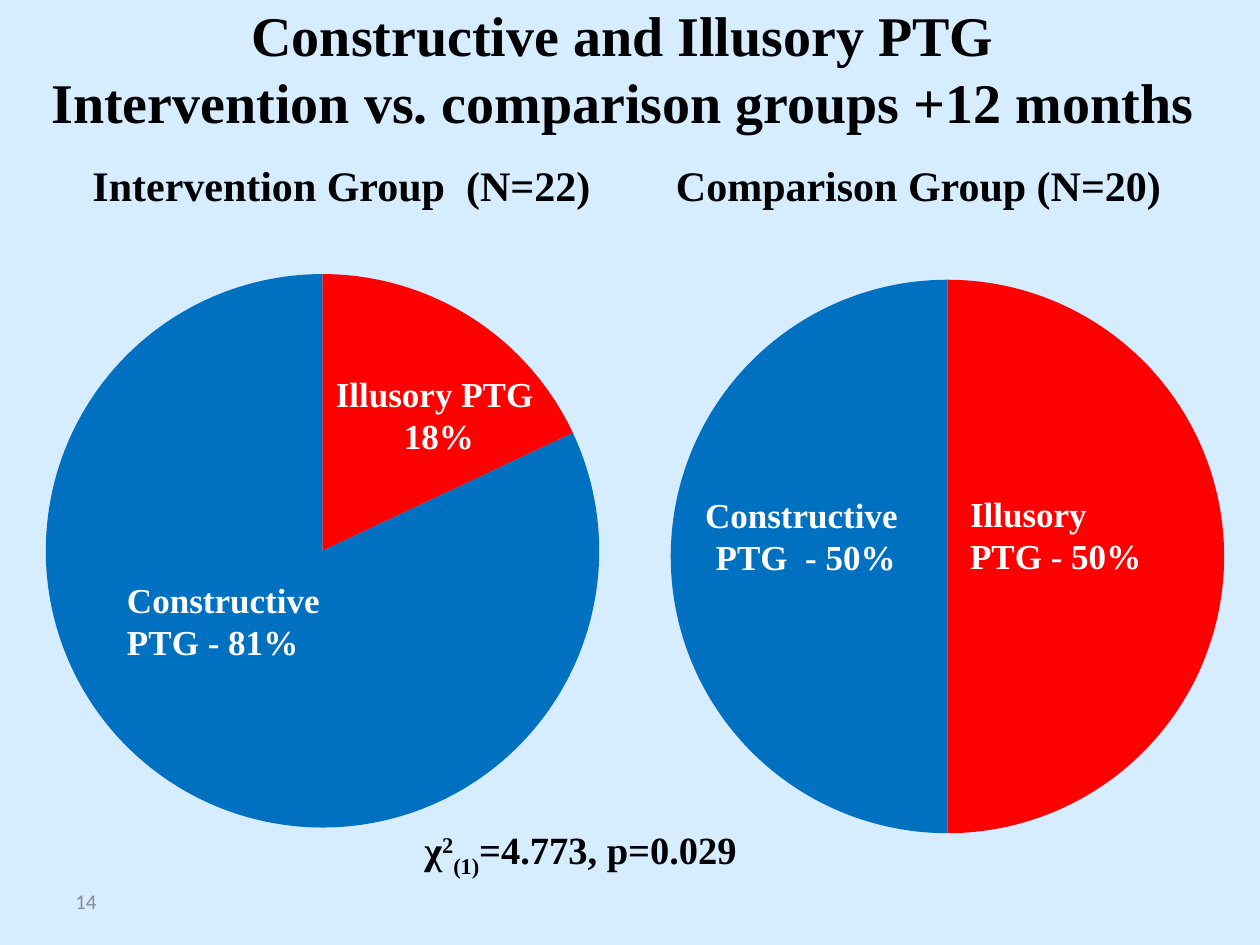
from dataclasses import dataclass

from lxml import etree
from pptx import Presentation
from pptx import util as u
from pptx.chart.data import CategoryChartData
from pptx.dml.color import RGBColor
from pptx.enum import chart as charts
from pptx.enum import text
from pptx.oxml.ns import qn

SERIF = "Times New Roman"
BLACK, WHITE, GRAY = "000000", "FFFFFF", "8C8C8C"
ILLUSORY, CONSTRUCTIVE = "FF0000", "0070C0"
LEFT, CENTER = text.PP_ALIGN.LEFT, text.PP_ALIGN.CENTER
TOP, MIDDLE = text.MSO_ANCHOR.TOP, text.MSO_ANCHOR.MIDDLE


@dataclass
class Span:
    words: str
    baseline: int = 0
    new_line: bool = False


@dataclass
class Label:
    at: tuple[float, float, float, float]
    paras: list[list[Span]]
    size: float
    hue: str = BLACK
    align: text.PP_ALIGN = CENTER
    anchor: text.MSO_ANCHOR = TOP
    wrap: bool = True
    font: str = SERIF
    bold: bool = True


@dataclass
class Pie:
    at: tuple[float, float, float, float]
    values: tuple[int, int]


def color(code: str) -> RGBColor:
    return RGBColor.from_string(code)


def lengths(at: tuple) -> list[u.Length]:
    return [u.Inches(value) for value in at]


def lines(*words: str) -> list[list[Span]]:
    """Make one single-span paragraph of each string."""
    return [[Span(line)] for line in words]


def draw_label(page, label: Label) -> None:
    frame = page.shapes.add_textbox(*lengths(label.at)).text_frame
    frame.word_wrap = label.wrap
    frame.vertical_anchor = label.anchor
    font_format = {"name": label.font, "size": u.Pt(label.size), "bold": label.bold}
    for index, spans in enumerate(label.paras):
        para = frame.add_paragraph() if index else frame.paragraphs[0]
        para.alignment = label.align
        for span in spans:
            if span.new_line:
                para.add_line_break()
            run = para.add_run()
            run.text = span.words
            for name, value in font_format.items():
                setattr(run.font, name, value)
            run.font.color.rgb = color(label.hue)
            if span.baseline:
                run._r.get_or_add_rPr().set("baseline", str(span.baseline * 1000))


def set_plot_area(chart) -> None:
    """Fix the inner plot area as fractions of the chart frame."""
    plot_area = chart._chartSpace.chart.plotArea
    for old in plot_area.findall(qn("c:layout")):
        plot_area.remove(old)
    layout = etree.Element(qn("c:layout"))
    manual = etree.SubElement(layout, qn("c:manualLayout"))
    settings = {"layoutTarget": "inner", "xMode": "edge", "yMode": "edge",
                "x": "0.003", "y": "0.056", "w": "0.994", "h": "0.887"}
    for name, value in settings.items():
        etree.SubElement(manual, qn(f"c:{name}")).set("val", value)
    plot_area.insert(0, layout)


def draw_pie(page, pie: Pie) -> None:
    data = CategoryChartData()
    data.categories = ["1", "2"]
    data.add_series("Series 1", pie.values)
    chart = page.shapes.add_chart(
        charts.XL_CHART_TYPE.PIE, *lengths(pie.at), data).chart
    for name, value in {"has_legend": False, "has_title": False}.items():
        setattr(chart, name, value)
    for name, value in {"name": "Calibri", "size": u.Pt(10)}.items():
        setattr(chart.font, name, value)
    chart.font.color.rgb = color(BLACK)
    plot = chart.plots[0]
    plot.vary_by_categories = True
    for index, hue in enumerate((ILLUSORY, CONSTRUCTIVE)):
        slice_format = plot.series[0].points[index].format
        slice_format.fill.solid()
        slice_format.fill.fore_color.rgb = color(hue)
        slice_format.line.fill.background()
    set_plot_area(chart)


PIES = [
    Pie((0.35, 1.7, 4.42, 5.35), (18, 82)),
    Pie((5.31, 1.78, 4.42, 5.28), (50, 50)),
]

LABELS = [
    Label((0, 0, 10, 1.07),
          [[Span("Constructive and Illusory PTG "),
            Span("Intervention vs. comparison groups +12 months ", new_line=True)]],
          32, anchor=MIDDLE),
    Label((0.5, 0.92, 4.42, 1.1), lines("Intervention Group  (N=22)"), 24, anchor=MIDDLE),
    Label((5.08, 0.92, 4.42, 1.1), lines("Comparison Group (N=20)"), 24, anchor=MIDDLE),
    Label((2.56, 2.91, 1.78, 0.77), lines("Illusory PTG", " 18%"), 20, WHITE, wrap=False),
    Label((0.91, 4.54, 2.2, 0.77), lines("Constructive PTG - 81%"), 20, WHITE, LEFT),
    Label((7.6, 3.86, 1.65, 0.77), lines("Illusory", "PTG - 50%"), 20, WHITE, LEFT),
    Label((5.49, 3.87, 1.81, 0.77), lines("Constructive ", "PTG  - 50%"), 20, WHITE,
          wrap=False),
    Label((3.27, 6.51, 3.62, 0.47),
          [[Span("χ"), Span("2", 30), Span("(1)", -25), Span("=4.773, p=0.029")]],
          22, align=LEFT),
    Label((0.5, 6.95, 2.33, 0.4), lines("14"), 12, GRAY, LEFT, MIDDLE,
          font="Calibri", bold=False),
]


def main() -> None:
    deck = Presentation()
    deck.slide_width, deck.slide_height = u.Inches(10), u.Inches(7.5)
    page = deck.slides.add_slide(deck.slide_layouts[6])
    page.background.fill.solid()
    page.background.fill.fore_color.rgb = color("D6ECFF")
    for pie in PIES:
        draw_pie(page, pie)
    for label in LABELS:
        draw_label(page, label)
    deck.save("out.pptx")


if __name__ == "__main__":
    main()
